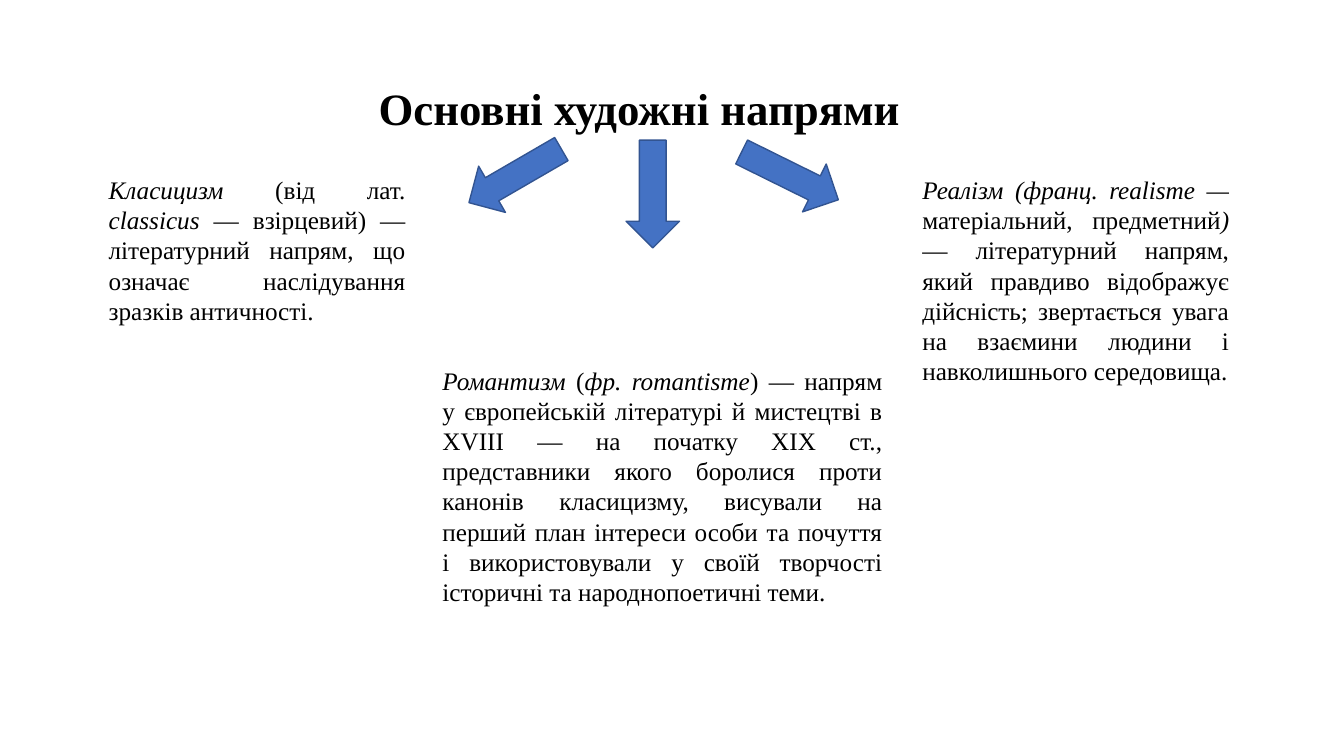
"""Build a slide on the main literary movements."""
from pptx import Presentation
from pptx.dml.color import RGBColor
from pptx.enum import shapes, text
from pptx.util import Inches, Pt

FONT = "Times New Roman"
ARROW = shapes.MSO_SHAPE
ALIGN = text.PP_ALIGN

DEFINITIONS = [
    ((0.98, 1.68, 3.14, 1.62), [
        "Класицизм ", "(від лат. ", "classicus ",
        "— взірцевий) — літературний напрям, що означає наслідування "
        "зразків античності."]),
    ((9.05, 1.68, 3.24, 2.52), [
        "Реалізм (франц. realisme — ", "матеріальний, предметний", ") ",
        "— літературний напрям, який правдиво відображує дійсність; "
        "звертається увага на взаємини людини і навколишнього середовища."]),
    ((4.29, 3.57, 4.56, 2.52), [
        "Романтизм", " (", "фр. romantisme",
        ") — напрям у європейській літературі й мистецтві в ХVІІІ — на "
        "початку ХІХ ст., представники якого боролися проти канонів "
        "класицизму, висували на перший план інтереси особи та почуття і "
        "використовували у своїй творчості історичні та народнопоетичні "
        "теми."]),
]

ARROWS = [
    (ARROW.DOWN_ARROW, (6.21, 1.39, 0.53, 1.07), 0),
    (ARROW.LEFT_ARROW, (4.58, 1.48, 1.06, 0.53), 329.9),
    (ARROW.RIGHT_ARROW, (7.3, 1.48, 1.07, 0.53), 26.3),
]


def color(value):
    """Turn a hex string into a colour."""
    return RGBColor.from_string(value)


def add_run(p, words, size=18, bold=False, italic=False, fill="000000"):
    """Append formatted text to a paragraph."""
    r = p.add_run()
    r.text = words
    r.font.name = FONT
    r.font.size = Pt(size)
    r.font.bold = bold
    r.font.italic = italic
    r.font.color.rgb = color(fill)


def add_box(s, box, align, wrap=True):
    """Add a text box and return its paragraph."""
    tf = s.shapes.add_textbox(*map(Inches, box)).text_frame
    tf.word_wrap = wrap
    tf.auto_size = text.MSO_AUTO_SIZE.SHAPE_TO_FIT_TEXT
    p = tf.paragraphs[0]
    p.alignment = align
    return p


def add_definition(s, box, parts):
    """Add a justified definition whose parts alternate italic and upright."""
    p = add_box(s, box, ALIGN.JUSTIFY)
    for i, part in enumerate(parts):
        add_run(p, part, italic=i % 2 == 0)


def add_arrow(s, kind, box, angle):
    """Add a block arrow turned by an angle."""
    sp = s.shapes.add_shape(kind, *map(Inches, box))
    sp.rotation = angle
    sp.shadow.inherit = False
    sp.fill.solid()
    sp.fill.fore_color.rgb = color("4472C4")
    sp.line.color.rgb = color("325491")
    sp.line.width = Pt(1)


def main():
    """Create and save the presentation."""
    prs = Presentation()
    prs.slide_width, prs.slide_height = Inches(13.33), Inches(7.5)
    s = prs.slides.add_slide(prs.slide_layouts[6])
    title = add_box(s, (3.63, 0.75, 5.42, 0.64), ALIGN.CENTER, wrap=False)
    add_run(title, "Основні художні напрями", size=32, bold=True)
    for box, parts in DEFINITIONS:
        add_definition(s, box, parts)
    for kind, box, angle in ARROWS:
        add_arrow(s, kind, box, angle)
    prs.save("out.pptx")


if __name__ == "__main__":
    main()
